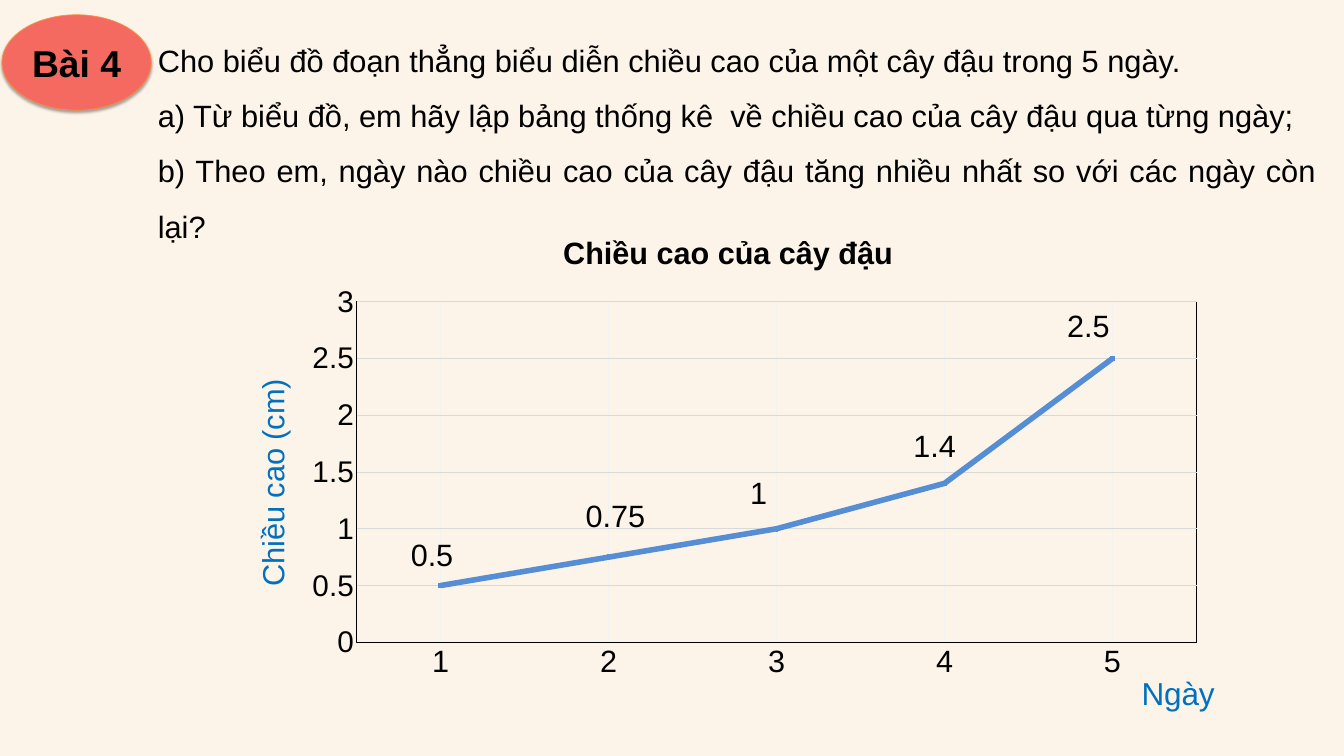
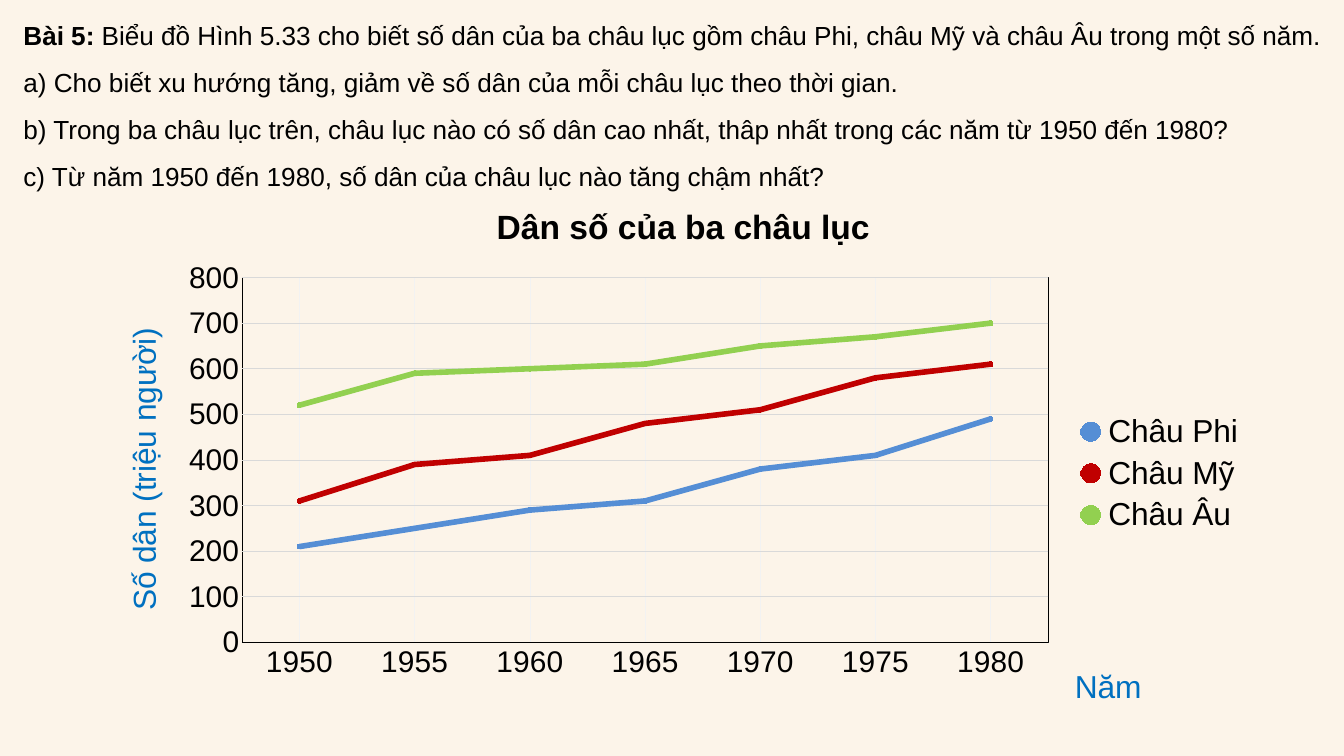
from lxml.etree import SubElement
from pptx import Presentation
from pptx.chart.data import CategoryChartData
from pptx.dml.color import RGBColor
from pptx.enum.chart import (XL_CHART_TYPE, XL_LABEL_POSITION, XL_LEGEND_POSITION,
                             XL_MARKER_STYLE, XL_TICK_MARK)
from pptx.enum.shapes import MSO_SHAPE
from pptx.enum.text import MSO_ANCHOR, MSO_AUTO_SIZE, PP_ALIGN
from pptx.oxml import parse_xml
from pptx.oxml.ns import nsdecls, qn
from pptx.util import Inches, Pt

BACKGROUND = "FCF4E9"
BLACK = "000000"
AXIS_BLUE = "0070C0"
GRID = "D9D9D9"
FAINT_GRID = "F2F2F2"
CORAL = "F46A61"
ORANGE = "F69240"
BLUE = "558ED5"
RED = "C00000"
GREEN = "92D050"


def rgb(color):
    return RGBColor.from_string(color)


def style_font(font, size, color=BLACK, bold=False):
    font.name = "Arial"
    font.size = Pt(size)
    font.bold = bold
    font.color.rgb = rgb(color)


def style_line(line, color, width):
    line.color.rgb = rgb(color)
    line.width = Pt(width)


def set_layout(element, index, modes, **fractions):
    for previous in element.findall(qn("c:layout")):
        element.remove(previous)
    layout = parse_xml(f"<c:layout {nsdecls('c')}/>")
    manual = SubElement(layout, qn("c:manualLayout"))
    settings = modes | {key: f"{value:.4f}" for key, value in fractions.items()}
    for key, value in settings.items():
        SubElement(manual, qn(f"c:{key}"), val=value)
    element.insert(index, layout)


class Lesson:
    def __init__(self):
        self.deck = Presentation()
        self.deck.slide_width = Inches(20)
        self.deck.slide_height = Inches(11.25)
        self.slide = None

    def add_slide(self):
        self.slide = self.deck.slides.add_slide(self.deck.slide_layouts[6])
        fill = self.slide.background.fill
        fill.solid()
        fill.fore_color.rgb = rgb(BACKGROUND)

    def add_badge(self, wording, box):
        badge = self.slide.shapes.add_shape(MSO_SHAPE.OVAL, *map(Inches, box))
        badge.fill.solid()
        badge.fill.fore_color.rgb = rgb(CORAL)
        style_line(badge.line, ORANGE, 0.75)
        badge.shadow.inherit = False
        effects = badge._element.spPr.find(qn("a:effectLst"))
        shadow = SubElement(effects, qn("a:outerShdw"), blurRad=str(Pt(3.1)),
                            dist=str(Pt(1.8)), dir="5400000", rotWithShape="0")
        shade = SubElement(shadow, qn("a:srgbClr"), val=BLACK)
        SubElement(shade, qn("a:alpha"), val="35000")
        frame = badge.text_frame
        frame.vertical_anchor = MSO_ANCHOR.MIDDLE
        frame.text = wording
        frame.paragraphs[0].alignment = PP_ALIGN.CENTER
        style_font(frame.paragraphs[0].font, 40, bold=True)

    def add_exercise(self, questions, box, size, lead=""):
        frame = self.slide.shapes.add_textbox(*map(Inches, box)).text_frame
        frame.word_wrap = True
        frame.auto_size = MSO_AUTO_SIZE.SHAPE_TO_FIT_TEXT
        for number, question in enumerate(questions):
            paragraph = frame.add_paragraph() if number else frame.paragraphs[0]
            paragraph.alignment = PP_ALIGN.JUSTIFY
            paragraph.line_spacing = 1.5
            style_font(paragraph.font, size)
            if lead and number == 0:
                opening = paragraph.add_run()
                opening.text = lead
                opening.font.bold = True
            paragraph.add_run().text = question

    def add_line_chart(self, box, plot_box, categories, series):
        data = CategoryChartData()
        data.categories = categories
        for name, values, _ in series:
            data.add_series(name, values)
        chart = self.slide.shapes.add_chart(
            XL_CHART_TYPE.LINE_MARKERS, *map(Inches, box), data).chart
        chart.font.name = "Calibri"
        chart.font.size = Pt(10)
        chart.font.color.rgb = rgb(BLACK)
        chart.has_legend = False
        chart.plots[0].vary_by_categories = False
        for line, (_, _, color) in zip(chart.plots[0].series, series):
            line.smooth = False
            style_line(line.format.line, color, 6)
            line.marker.style = XL_MARKER_STYLE.CIRCLE
            line.marker.size = 5
            line.marker.format.fill.solid()
            line.marker.format.fill.fore_color.rgb = rgb(color)
            line.marker.format.line.color.rgb = rgb(color)
        area = chart._chartSpace.chart.plotArea
        self.place(area, 0, box, plot_box, {"layoutTarget": "inner"})
        area.append(parse_xml(
            f'<c:spPr {nsdecls("c", "a")}><a:noFill/><a:ln w="{Pt(0.75)}"><a:solidFill>'
            f'<a:srgbClr val="{BLACK}"/></a:solidFill></a:ln></c:spPr>'))
        return chart

    def place(self, element, index, box, spot, extra=None):
        left, top, width, height = box
        modes = (extra or {}) | {"xMode": "edge", "yMode": "edge"}
        fractions = {"x": (spot[0] - left) / width, "y": (spot[1] - top) / height}
        if len(spot) == 4:
            fractions |= {"w": spot[2] / width, "h": spot[3] / height}
        set_layout(element, index, modes, **fractions)

    def add_title(self, owner, wording, box, spot, size, color=AXIS_BLUE, bold=False,
                  upright=False):
        title = owner.chart_title if hasattr(owner, "chart_title") else owner.axis_title
        title.text_frame.text = wording
        style_font(title.text_frame.paragraphs[0].font, size, color, bold)
        if upright:
            body = title.text_frame._txBody.find(qn("a:bodyPr"))
            body.set("rot", "-5400000")
            body.set("vert", "horz")
        self.place(title._element, 1, box, spot)

    def style_axes(self, chart, category_size, maximum, step):
        days, heights = chart.category_axis, chart.value_axis
        for axis, size in ((days, category_size), (heights, 32)):
            style_font(axis.tick_labels.font, size)
            axis.major_tick_mark = axis.minor_tick_mark = XL_TICK_MARK.NONE
        days.has_minor_gridlines = True
        style_line(days.minor_gridlines.format.line if hasattr(days, "minor_gridlines")
                   else self.minor_grid_line(days), FAINT_GRID, 0.75)
        style_line(heights.major_gridlines.format.line, GRID, 0.75)
        style_line(days.format.line, BLACK, 0.75)
        heights.format.line.fill.background()
        heights.minimum_scale = 0
        heights.maximum_scale = maximum
        heights.major_unit = step

    def minor_grid_line(self, axis):
        axis.has_major_gridlines = True
        line = axis.major_gridlines.format.line
        style_line(line, FAINT_GRID, 0.75)
        major = axis._element.find(qn("c:majorGridlines"))
        minor = axis._element.find(qn("c:minorGridlines"))
        for formatting in list(major):
            minor.append(formatting)
        axis.has_major_gridlines = False
        return line

    def add_value_labels(self, chart, box, shifts):
        heights = chart.plots[0].series[0]
        for number, (across, down) in enumerate(shifts):
            label = heights.points[number].data_label
            style_font(label.font, 33)
            label.position = XL_LABEL_POSITION.ABOVE
            set_layout(label._get_or_add_dLbl(), 1, {}, x=across / box[2], y=down / box[3])
        heights.data_labels.show_value = True
        style_font(heights.data_labels.font, 33)
        labels = heights._element.find(qn("c:dLbls"))
        for leader in labels.findall(qn("c:showLeaderLines")):
            leader.set("val", "0")

    def add_legend(self, chart, box, spot):
        chart.has_legend = True
        chart.legend.position = XL_LEGEND_POSITION.RIGHT
        chart.legend.include_in_layout = False
        style_font(chart.legend.font, 34)
        self.place(chart.legend._element, 1, box, spot)


def build_bean_slide(lesson):
    lesson.add_slide()
    box = (3.58, 3.26, 14.58, 7.99)
    chart = lesson.add_line_chart(box, (5.32, 4.49, 12.58, 5.07), list("12345"),
                                  [("Series 1", (0.5, 0.75, 1, 1.4, 2.5), BLUE)])
    lesson.style_axes(chart, 33, 3, 0.5)
    lesson.add_title(chart, "Chiều cao của cây đậu", box, (8.33, 3.38), 33, BLACK, True)
    lesson.add_title(chart.category_axis, "Ngày", box, (16.99, 9.93), 34)
    lesson.add_title(chart.value_axis, "Chiều cao (cm)", box, (3.68, 5.54), 33, upright=True)
    lesson.add_value_labels(chart, box, [(-0.13, -0.12), (0.1, -0.27), (-0.27, -0.2),
                                         (-0.15, -0.22), (-0.36, -0.15)])
    lesson.add_badge("Bài 4", (0.03, 0.22, 2.22, 1.42))
    lesson.add_exercise([
        "Cho biểu đồ đoạn thẳng biểu diễn chiều cao của một cây đậu trong 5 ngày.",
        "a) Từ biểu đồ, em hãy lập bảng thống kê  về chiều cao của cây đậu qua từng ngày;",
        "b) Theo em, ngày nào chiều cao của cây đậu tăng nhiều nhất so với các ngày còn lại?",
    ], (2.25, 0.29, 17.44, 3.33), 33)


def build_population_slide(lesson):
    lesson.add_slide()
    box = (1.67, 2.84, 17, 8.41)
    years = [str(year) for year in range(1950, 1981, 5)]
    chart = lesson.add_line_chart(box, (3.6, 4.13, 12, 5.43), years, [
        ("Châu Phi", (210, 250, 290, 310, 380, 410, 490), BLUE),
        ("Châu Mỹ", (310, 390, 410, 480, 510, 580, 610), RED),
        ("Châu Âu", (520, 590, 600, 610, 650, 670, 700), GREEN),
    ])
    lesson.style_axes(chart, 32, 800, 100)
    lesson.add_title(chart, "Dân số của ba châu lục", box, (7.3, 2.96), 36, BLACK, True)
    lesson.add_title(chart.category_axis, "Năm", box, (15.91, 9.83), 34)
    lesson.add_title(chart.value_axis, "Số dân (triệu người)", box, (1.75, 4.79), 34,
                     upright=True)
    lesson.add_legend(chart, box, (15.95, 6.07, 2.6, 1.95))
    lesson.add_exercise([
        "Biểu đồ Hình 5.33 cho biết số dân của ba châu lục gồm châu Phi, châu Mỹ "
        "và châu Âu trong một số năm.",
        "a) Cho biết xu hướng tăng, giảm về số dân của mỗi châu lục theo thời gian.",
        "b) Trong ba châu lục trên, châu lục nào có số dân cao nhất, thâp nhất "
        "trong các năm từ 1950 đến 1980?",
        "c) Từ năm 1950 đến 1980, số dân của châu lục nào tăng chậm nhất?",
    ], (0.25, 0, 19.75, 2.84), 28, lead="Bài 5: ")


def main():
    lesson = Lesson()
    build_bean_slide(lesson)
    build_population_slide(lesson)
    lesson.deck.save("out.pptx")


if __name__ == "__main__":
    main()
